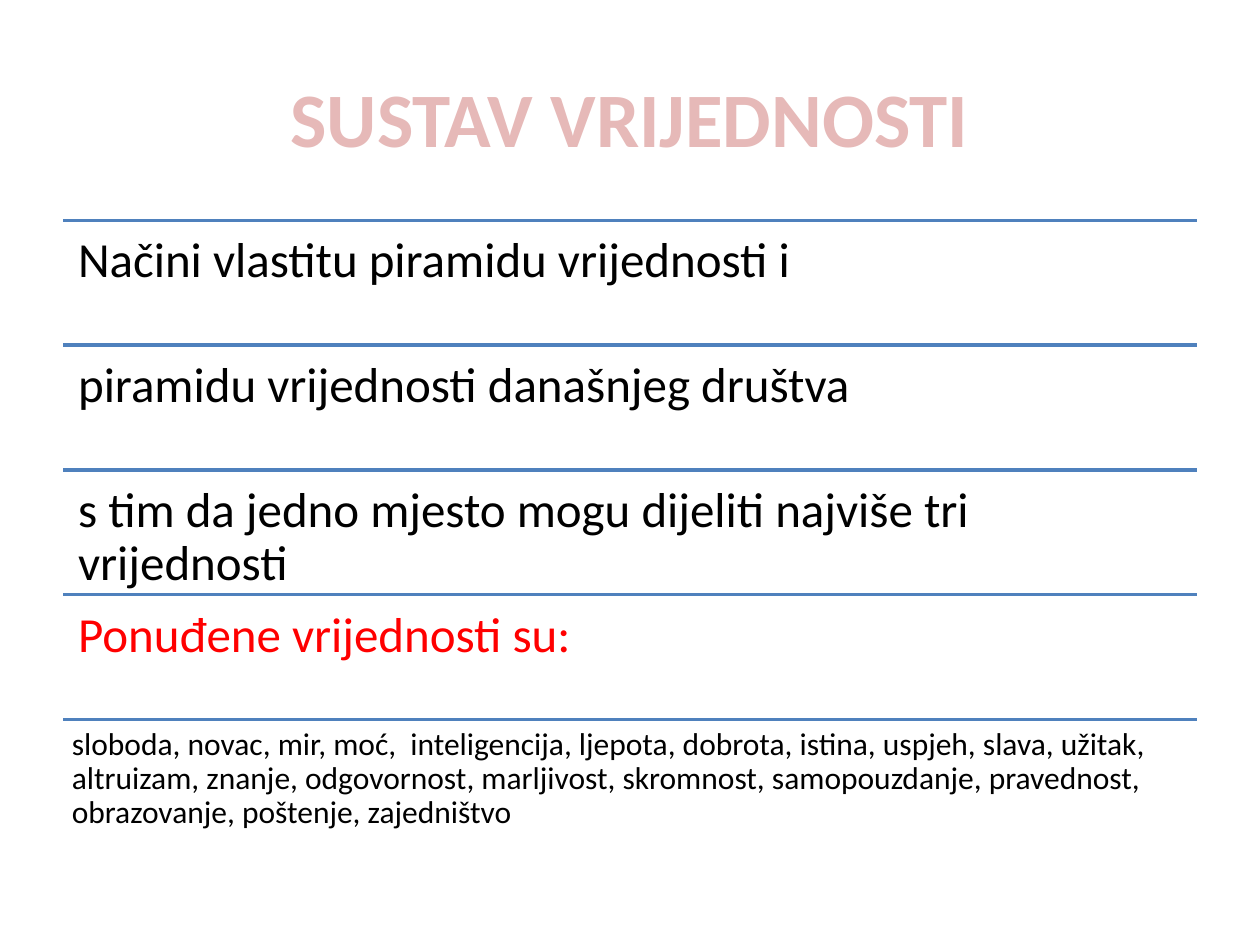
"""Builds the value system slide: a title above five ruled rows of text."""
from dataclasses import dataclass

from lxml import etree
from pptx import Presentation
from pptx.dml.color import RGBColor
from pptx.enum.shapes import MSO_CONNECTOR
from pptx.enum.text import MSO_ANCHOR, PP_ALIGN
from pptx.oxml.ns import qn
from pptx.util import Inches, Pt

STRAIGHT = MSO_CONNECTOR.STRAIGHT
TOP, MIDDLE = MSO_ANCHOR.TOP, MSO_ANCHOR.MIDDLE
LEFT, CENTER = PP_ALIGN.LEFT, PP_ALIGN.CENTER


@dataclass(frozen=True)
class Theme:
    font: str = "Calibri"
    title: str = "E6B9B8"
    title_outline: str = "C0504D"
    rule: str = "4F81BD"
    text: str = "000000"
    accent: str = "FF0000"
    title_size: float = 44
    row_size: float = 28
    list_size: float = 18
    outline_width: float = 1.75
    rule_width: float = 2


THEME = Theme()
TITLE = "SUSTAV VRIJEDNOSTI"
ROW_FORMAT = {"size": THEME.row_size, "inset": 0.12}
LIST_FORMAT = {"size": THEME.list_size, "inset": 0.07}
ROWS = [
    ("Načini vlastitu piramidu vrijednosti i", ROW_FORMAT),
    ("piramidu vrijednosti današnjeg društva", ROW_FORMAT),
    ("s tim da jedno mjesto mogu dijeliti najviše tri vrijednosti", ROW_FORMAT),
    ("Ponuđene vrijednosti su:", {**ROW_FORMAT, "color": THEME.accent}),
    ("sloboda, novac, mir, moć,  inteligencija, ljepota, dobrota, istina, "
     "uspjeh, slava, užitak, altruizam, znanje, odgovornost, marljivost, "
     "skromnost, samopouzdanje, pravednost, obrazovanje, poštenje, "
     "zajedništvo", LIST_FORMAT),
]
MARGIN, WIDTH = 0.5, 9
TITLE_TOP, TITLE_HEIGHT = 0.3, 1.25
ROWS_TOP, ROW_HEIGHT = 1.75, 0.99


def write(box, text, *, size, color=THEME.text, bold=False, align=LEFT,
          anchor=TOP, inset=None, spacing=None):
    frame = box.text_frame
    frame.word_wrap = True
    frame.vertical_anchor = anchor
    if inset is not None:
        frame.margin_left = frame.margin_right = Inches(inset)
        frame.margin_top = frame.margin_bottom = Inches(inset)
    para = frame.paragraphs[0]
    para.alignment = align
    if spacing is not None:
        para.line_spacing = spacing
    span = para.add_run()
    span.text = text
    span.font.name = THEME.font
    span.font.size = Pt(size)
    span.font.bold = bold
    span.font.color.rgb = RGBColor.from_string(color)
    return span


def outline(span, color, width):
    line = etree.Element(qn("a:ln"), w=str(Pt(width)))
    fill = etree.SubElement(line, qn("a:solidFill"))
    etree.SubElement(fill, qn("a:srgbClr"), val=color)
    span.font._element.insert(0, line)


def add_title(page):
    box = page.shapes.title
    box.left, box.top = Inches(MARGIN), Inches(TITLE_TOP)
    box.width, box.height = Inches(WIDTH), Inches(TITLE_HEIGHT)
    span = write(box, TITLE, size=THEME.title_size, color=THEME.title,
                 bold=True, align=CENTER, anchor=MIDDLE)
    outline(span, THEME.title_outline, THEME.outline_width)


def add_row(page, top, text, text_format):
    rule = page.shapes.add_connector(
        STRAIGHT, Inches(MARGIN), Inches(top), Inches(MARGIN + WIDTH), Inches(top))
    rule.line.color.rgb = RGBColor.from_string(THEME.rule)
    rule.line.width = Pt(THEME.rule_width)
    etree.SubElement(rule._element.spPr, qn("a:effectLst"))
    box = page.shapes.add_textbox(
        Inches(MARGIN), Inches(top), Inches(WIDTH), Inches(ROW_HEIGHT))
    write(box, text, spacing=0.9, **text_format)


def main():
    deck = Presentation()
    deck.slide_width, deck.slide_height = Inches(10), Inches(7.5)
    page = deck.slides.add_slide(deck.slide_layouts[5])
    add_title(page)
    for index, (text, text_format) in enumerate(ROWS):
        add_row(page, ROWS_TOP + index * ROW_HEIGHT, text, text_format)
    deck.save("out.pptx")


if __name__ == "__main__":
    main()
